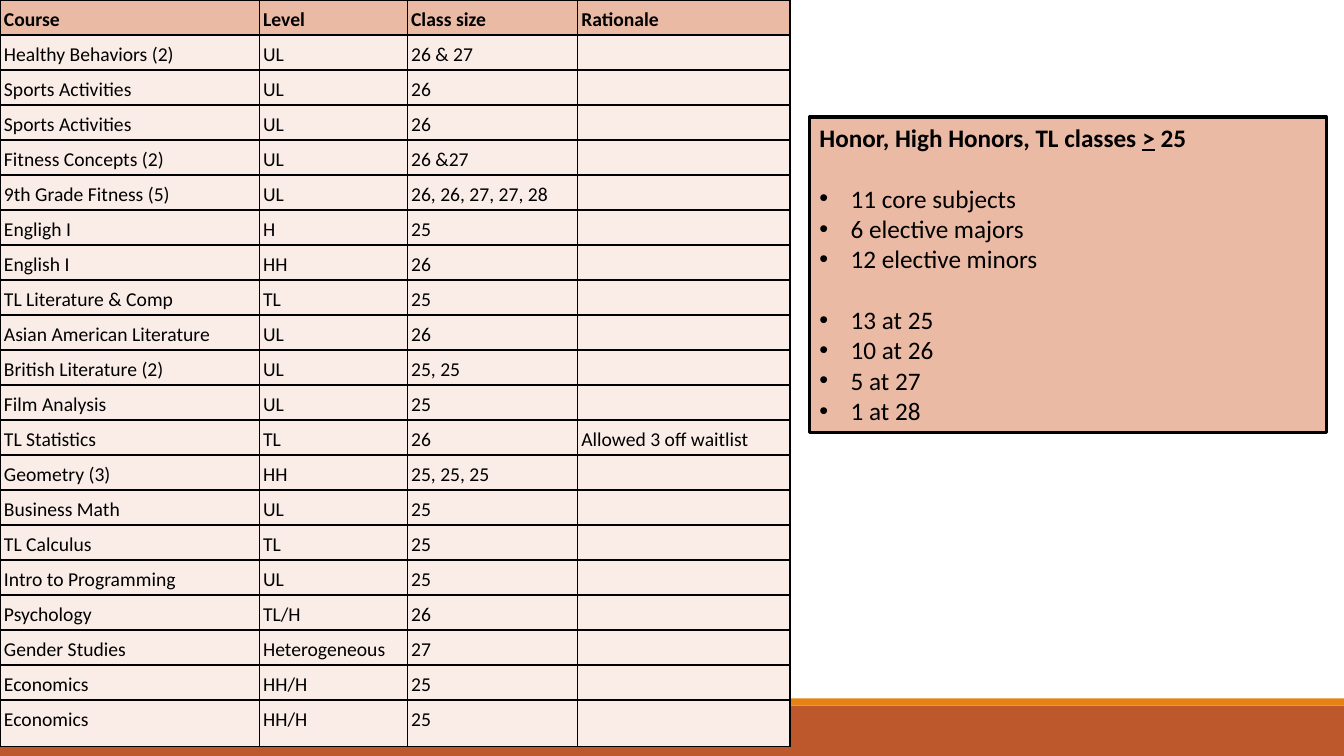
import pptx
import pptx.dml.color
import pptx.enum.shapes
import pptx.enum.text
import pptx.oxml
import pptx.oxml.ns
import pptx.util
from lxml import etree

Cm = pptx.util.Cm
Pt = pptx.util.Pt
RGBColor = pptx.dml.color.RGBColor

BLACK = RGBColor(0x00, 0x00, 0x00)
RUST = RGBColor(0xBD, 0x58, 0x2C)
ORANGE = RGBColor(0xE4, 0x83, 0x12)
SALMON = RGBColor(0xEA, 0xBA, 0xA5)
BLUSH = RGBColor(0xFA, 0xED, 0xE7)

FONT = "Calibri"
SLIDE_W, SLIDE_H = 33.87, 19.05

COLUMN_WIDTHS = [6.53, 3.73, 4.29, 5.36]
ROW_HEIGHTS = [0.76] * 17 + [0.71, 0.74, 0.79, 1.17]
COURSES = [
    ("Course", "Level", "Class size", "Rationale"),
    ("Healthy Behaviors (2)", "UL", "26 & 27", ""),
    ("Sports Activities", "UL", "26", ""),
    ("Sports Activities", "UL", "26", ""),
    ("Fitness Concepts (2)", "UL", "26 &27", ""),
    ("9th Grade Fitness (5)", "UL", "26, 26, 27, 27, 28", ""),
    ("Engligh I", "H", "25", ""),
    ("English I", "HH", "26", ""),
    ("TL Literature & Comp", "TL", "25", ""),
    ("Asian American Literature", "UL", "26", ""),
    ("British Literature (2)", "UL", "25, 25", ""),
    ("Film Analysis", "UL", "25", ""),
    ("TL Statistics", "TL", "26", "Allowed 3 off waitlist"),
    ("Geometry (3)", "HH", "25, 25, 25", ""),
    ("Business Math", "UL", "25", ""),
    ("TL Calculus", "TL", "25", ""),
    ("Intro to Programming", "UL", "25", ""),
    ("Psychology", "TL/H", "26", ""),
    ("Gender Studies", "Heterogeneous", "27", ""),
    ("Economics", "HH/H", "25", ""),
    ("Economics", "HH/H", "25", ""),
]
SUMMARY_GROUPS = [
    ["11 core subjects", "6 elective majors", "12 elective minors"],
    ["13 at 25", "10 at 26", "5 at 27", "1 at 28"],
]


def add_text(p, text, size=18, bold=False, underline=False, color=BLACK):
    r = p.add_run()
    r.text = text
    r.font.name = FONT
    r.font.size = Pt(size)
    r.font.bold = bold
    r.font.underline = underline
    r.font.color.rgb = color


def add_rect(slide, left, top, width, height, fill, line_width=None):
    sp = slide.shapes.add_shape(
        pptx.enum.shapes.MSO_SHAPE.RECTANGLE,
        Cm(left), Cm(top), Cm(width), Cm(height))
    sp.shadow.inherit = False
    sp.fill.solid()
    sp.fill.fore_color.rgb = fill
    if line_width:
        sp.line.color.rgb = BLACK
        sp.line.width = Pt(line_width)
    else:
        sp.line.fill.background()
    return sp


def set_borders(cell, width=1):
    tcPr = cell._tc.get_or_add_tcPr()
    for i, side in enumerate(("lnL", "lnR", "lnT", "lnB")):
        ln = pptx.oxml.parse_xml(
            f'<a:{side} {pptx.oxml.ns.nsdecls("a")} w="{Pt(width)}">'
            f'<a:solidFill><a:srgbClr val="{BLACK}"/></a:solidFill></a:{side}>')
        tcPr.insert(i, ln)


def fill_cell(cell, text, fill, bold):
    cell.margin_left = cell.margin_right = cell.margin_top = Cm(0.1)
    cell.margin_bottom = Cm(0.09)
    cell.fill.solid()
    cell.fill.fore_color.rgb = fill
    set_borders(cell)
    p = cell.text_frame.paragraphs[0]
    p.line_spacing = 1.15
    if text:
        add_text(p, text, size=14, bold=bold)
    else:
        # An empty cell keeps the row as low as its neighbours
        end = etree.SubElement(p._p, pptx.oxml.ns.qn("a:endParaRPr"))
        end.set("sz", "1400")


def add_course_table(slide):
    table = slide.shapes.add_table(
        len(COURSES), len(COLUMN_WIDTHS), Cm(0), Cm(0),
        Cm(sum(COLUMN_WIDTHS)), Cm(sum(ROW_HEIGHTS))).table
    table.horz_banding = False
    for column, width in zip(table.columns, COLUMN_WIDTHS):
        column.width = Cm(width)
    for i, (row, height) in enumerate(zip(table.rows, ROW_HEIGHTS)):
        row.height = Cm(height)
        header = i == 0
        for cell, text in zip(row.cells, COURSES[i]):
            fill_cell(cell, text, SALMON if header else BLUSH, header)


def set_bullet(p, indent=0.79):
    pPr = p._p.get_or_add_pPr()
    pPr.set("marL", str(Cm(indent)))
    pPr.set("indent", str(-Cm(indent)))
    etree.SubElement(pPr, pptx.oxml.ns.qn("a:buFont")).set("typeface", "Arial")
    etree.SubElement(pPr, pptx.oxml.ns.qn("a:buChar")).set("char", "•")


def add_summary(slide):
    sp = add_rect(slide, 20.4, 2.95, 13.03, 7.95, SALMON, line_width=2.25)
    tf = sp.text_frame
    tf.word_wrap = True
    tf.vertical_anchor = pptx.enum.text.MSO_ANCHOR.TOP
    p = tf.paragraphs[0]
    p.alignment = pptx.enum.text.PP_ALIGN.LEFT
    add_text(p, "Honor, High Honors, TL classes ", bold=True)
    add_text(p, ">", bold=True, underline=True)
    add_text(p, " 25", bold=True)
    for group in SUMMARY_GROUPS:
        for i, item in enumerate(group):
            p = tf.add_paragraph()
            p.alignment = pptx.enum.text.PP_ALIGN.LEFT
            p.space_before = Pt(0 if i else 22)
            set_bullet(p)
            add_text(p, item)


def main():
    prs = pptx.Presentation()
    prs.slide_width, prs.slide_height = Cm(SLIDE_W), Cm(SLIDE_H)
    slide = prs.slides.add_slide(prs.slide_layouts[6])

    # Footer bands
    add_rect(slide, 0, 17.78, SLIDE_W, 1.27, RUST)
    add_rect(slide, 0, 17.6, SLIDE_W, 0.18, ORANGE)

    # Class sizes by course
    add_course_table(slide)

    # Summary of large classes
    add_summary(slide)

    prs.save("out.pptx")


if __name__ == "__main__":
    main()
